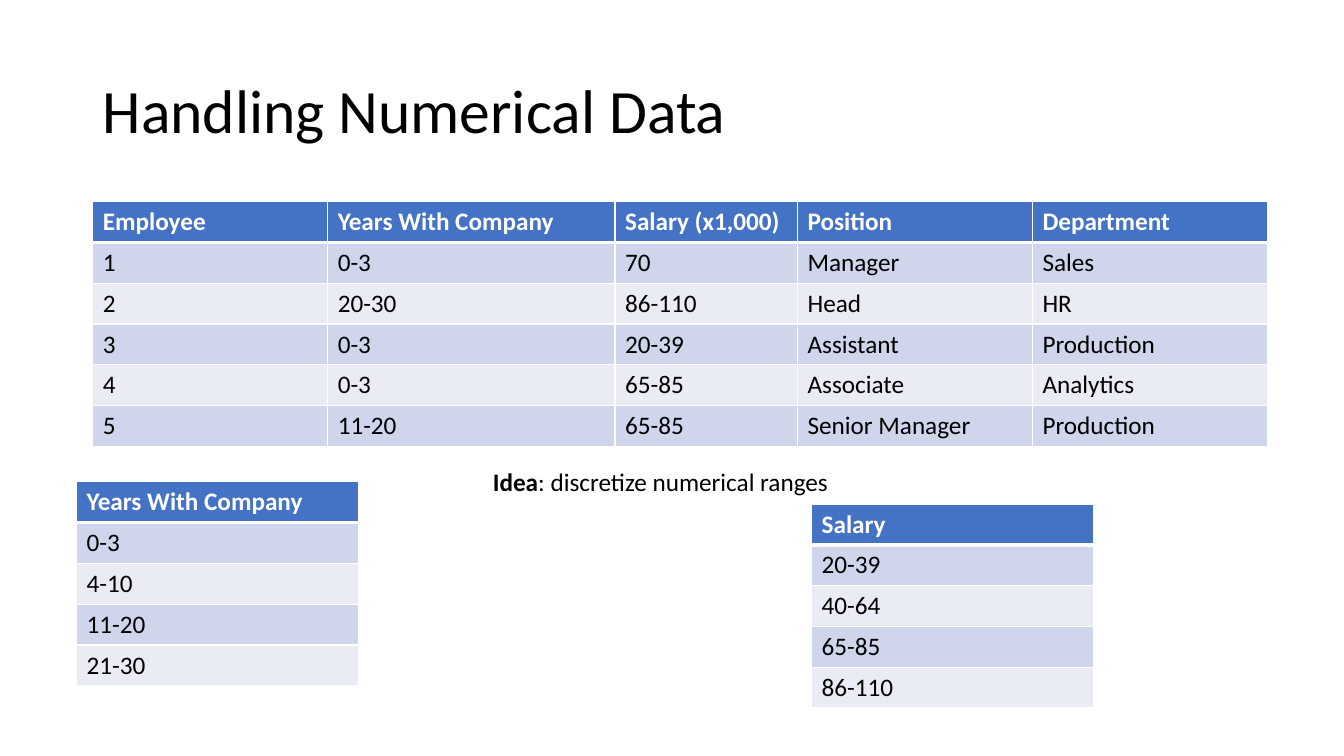
import lxml.etree
import pptx
import pptx.dml.color
import pptx.enum.text
import pptx.oxml.ns
import pptx.util

Inches = pptx.util.Inches
RGBColor = pptx.dml.color.RGBColor
BLACK = RGBColor(0x00, 0x00, 0x00)
WHITE = RGBColor(0xFF, 0xFF, 0xFF)
HEADER_BLUE = RGBColor(0x44, 0x72, 0xC4)
BAND_COLORS = (RGBColor(0xCF, 0xD5, 0xEA), RGBColor(0xE9, 0xEB, 0xF5))

TITLE_FORMAT = {"name": "Calibri", "size": pptx.util.Pt(44), "bold": False}
BODY_FORMAT = {"name": "Calibri", "size": pptx.util.Pt(18), "bold": False}
BOLD_FORMAT = {**BODY_FORMAT, "bold": True}

ROW_HEIGHT = 0.405
EMPLOYEE_WIDTHS = (2.33, 2.85, 1.81, 2.33, 2.33)
EMPLOYEES = (
    ("Employee", "Years With Company", "Salary (x1,000)", "Position", "Department"),
    ("1", "0-3", "70", "Manager", "Sales"),
    ("2", "20-30", "86-110", "Head", "HR"),
    ("3", "0-3", "20-39", "Assistant", "Production"),
    ("4", "0-3", "65-85", "Associate", "Analytics"),
    ("5", "11-20", "65-85", "Senior Manager", "Production"),
)
YEAR_RANGES = (("Years With Company",), ("0-3",), ("4-10",), ("11-20",), ("21-30",))
SALARY_RANGES = (("Salary",), ("20-39",), ("40-64",), ("65-85",), ("86-110",))


def add_run(paragraph, text, font_format, color):
    """Append a formatted run to a paragraph."""
    run = paragraph.add_run()
    run.text = text
    for attribute, value in font_format.items():
        setattr(run.font, attribute, value)
    run.font.color.rgb = color


def add_text(slide, position, runs, frame_format, line_spacing=1.0):
    """Add a text box with one paragraph of (text, format) runs."""
    shape = slide.shapes.add_textbox(*map(Inches, position))
    for attribute, value in frame_format.items():
        setattr(shape.text_frame, attribute, value)
    paragraph = shape.text_frame.paragraphs[0]
    paragraph.line_spacing = line_spacing
    for text, font_format in runs:
        add_run(paragraph, text, font_format, BLACK)


def set_borders(cell, widths):
    """Draw white cell borders from a dict of side to width in points."""
    properties = cell._tc.get_or_add_tcPr()
    qn = pptx.oxml.ns.qn
    for index, (side, width) in enumerate(widths.items()):
        line = lxml.etree.Element(qn(f"a:ln{side}"), w=str(pptx.util.Pt(width)))
        fill = lxml.etree.SubElement(line, qn("a:solidFill"))
        lxml.etree.SubElement(fill, qn("a:srgbClr"), val=str(WHITE))
        properties.insert(index, line)


def add_banded_table(slide, left, top, column_widths, rows):
    """Add a table with a blue header row and banded body rows."""
    size = (sum(column_widths), ROW_HEIGHT * len(rows))
    table = slide.shapes.add_table(
        len(rows), len(column_widths), *map(Inches, (left, top, *size))
    ).table
    for column, width in zip(table.columns, column_widths):
        column.width = Inches(width)
    for row_index, values in enumerate(rows):
        is_header = row_index == 0
        table.rows[row_index].height = Inches(ROW_HEIGHT)
        fill_color = HEADER_BLUE if is_header else BAND_COLORS[(row_index - 1) % 2]
        font_format, text_color = (BOLD_FORMAT, WHITE) if is_header else (BODY_FORMAT, BLACK)
        borders = {"L": 1, "R": 1, "T": 3 if row_index == 1 else 1, "B": 3 if is_header else 1}
        for column_index, text in enumerate(values):
            cell = table.cell(row_index, column_index)
            cell.fill.solid()
            cell.fill.fore_color.rgb = fill_color
            set_borders(cell, borders)
            add_run(cell.text_frame.paragraphs[0], text, font_format, text_color)


def main():
    """Build and save the slide."""
    presentation = pptx.Presentation()
    presentation.slide_width = Inches(13.33)
    presentation.slide_height = Inches(7.5)
    slide = presentation.slides.add_slide(presentation.slide_layouts[6])
    add_text(
        slide,
        (0.92, 0.4, 11.5, 1.45),
        [("Handling Numerical Data", TITLE_FORMAT)],
        {"word_wrap": True, "vertical_anchor": pptx.enum.text.MSO_ANCHOR.MIDDLE},
        line_spacing=0.9,
    )
    add_banded_table(slide, 0.92, 2, EMPLOYEE_WIDTHS, EMPLOYEES)
    add_text(
        slide,
        (4.79, 4.58, 3.56, 0.4),
        [("Idea", BOLD_FORMAT), (": discretize numerical ranges", BODY_FORMAT)],
        {"word_wrap": False, "auto_size": pptx.enum.text.MSO_AUTO_SIZE.SHAPE_TO_FIT_TEXT},
    )
    add_banded_table(slide, 0.76, 4.78, (2.8,), YEAR_RANGES)
    add_banded_table(slide, 8.05, 5, (2.8,), SALARY_RANGES)
    presentation.save("out.pptx")


if __name__ == "__main__":
    main()
